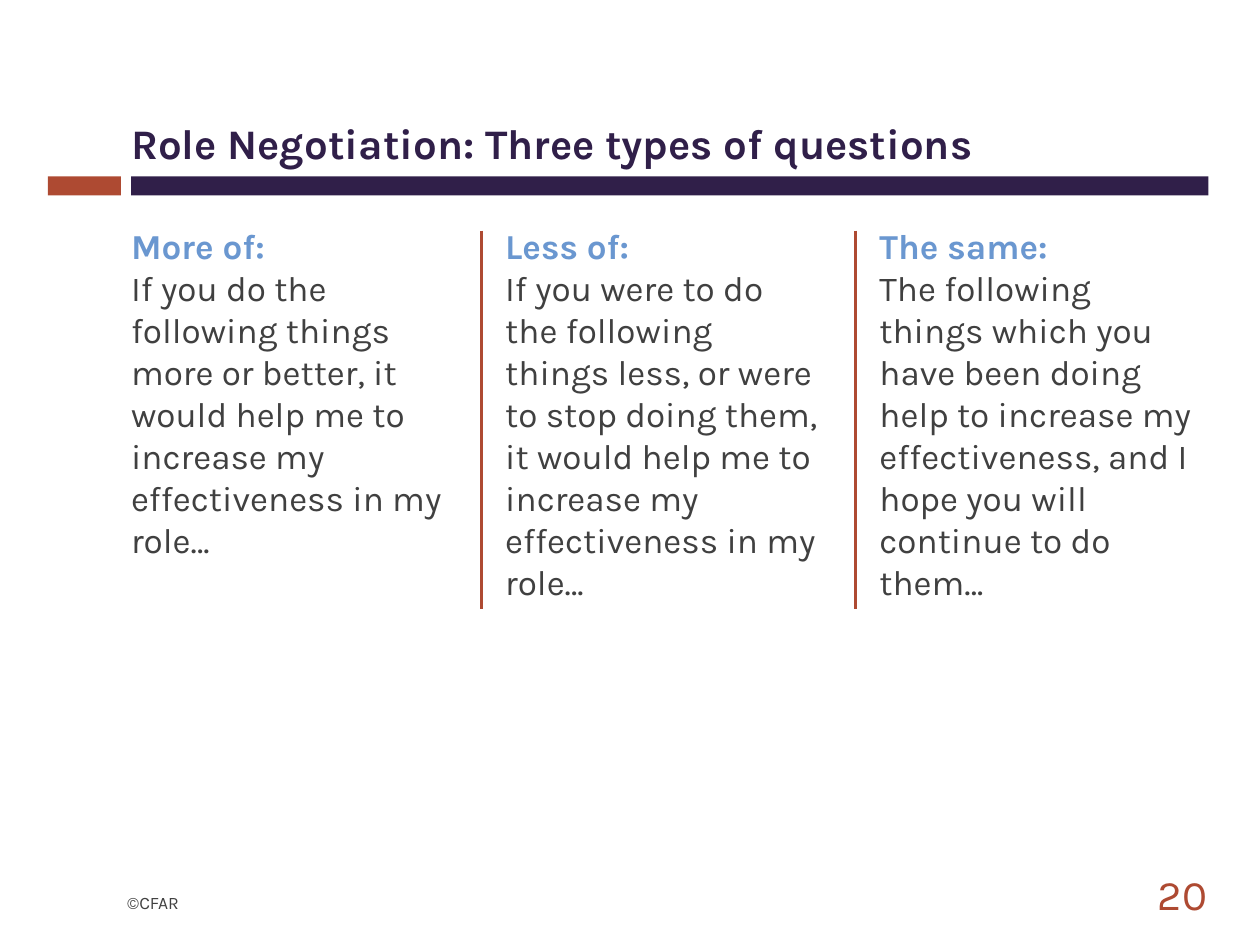
"""Build the role negotiation slide with its three types of questions."""
from dataclasses import dataclass

from lxml import etree
from pptx import Presentation
from pptx import util as u
from pptx.dml.color import RGBColor
from pptx.enum import shapes, text
from pptx.oxml.ns import qn

TITLE = "Role Negotiation: Three types of questions"
QUESTIONS = [
    ("More of:", "If you do the following things more or better, it would help me "
                 "to increase my effectiveness in my role…"),
    ("Less of:", "If you were to do the following things less, or were to stop doing "
                 "them, it would help me to increase my effectiveness in my role…"),
    ("The same:", "The following things which you have been doing help to increase my "
                  "effectiveness, and I hope you will continue to do them…"),
]
COPYRIGHT = "©CFAR"
PAGE = "20"


@dataclass(frozen=True)
class Theme:
    font: str = "Karla"
    purple: str = "301F49"
    rust: str = "AE4A32"
    blue: str = "6A97D0"
    grey: str = "404040"
    title: int = 24
    body: int = 20
    small: int = 10


T = Theme()
W, H = 10, 7.5
LEFT, RIGHT = 1.04, 9.58
COL_W = 2.6
PITCH = (RIGHT - LEFT - COL_W) / (len(QUESTIONS) - 1)
COL_TOP, COL_H = 1.73, 3.21
RULE_TOP, RULE_H, RULE_GAP = 1.83, 3, 0.19
BAR_TOP, BAR_H = 1.4, 0.15
INSET = (0, 0.05, 0.1, 0.05)


def add_run(p, words, size=T.body, color=T.grey, bold=False):
    r = p.add_run()
    r.text = words
    f = r.font
    f.name, f.size, f.bold = T.font, u.Pt(size), bold
    f.color.rgb = RGBColor.from_string(color)


def place(sp, box, inset=(0, 0, 0, 0), anchor="TOP", align="LEFT"):
    sp.left, sp.top, sp.width, sp.height = map(u.Inches, box)
    tf = sp.text_frame
    tf.word_wrap, tf.auto_size = True, text.MSO_AUTO_SIZE.NONE
    tf.margin_left, tf.margin_top, tf.margin_right, tf.margin_bottom = map(u.Inches, inset)
    tf.vertical_anchor = text.MSO_ANCHOR[anchor]
    p = tf.paragraphs[0]
    p.alignment = text.PP_ALIGN[align]
    return p


def add_text(s, box, words, inset=(0, 0, 0, 0), anchor="TOP", align="LEFT", heading=None, **fmt):
    sp = s.shapes.add_textbox(0, 0, 0, 0)
    p = place(sp, box, inset, anchor, align)
    if heading:
        add_run(p, heading, color=T.blue, bold=True)
        p.add_line_break()
    add_run(p, words, **fmt)


def add_bar(s, left, width, color):
    sp = s.shapes.add_shape(shapes.MSO_SHAPE.RECTANGLE,
                            *map(u.Inches, (left, BAR_TOP, width, BAR_H)))
    sp.shadow.inherit = False
    sp.fill.solid()
    sp.fill.fore_color.rgb = RGBColor.from_string(color)
    sp.line.fill.background()


def add_rule(s, x):
    c = s.shapes.add_connector(shapes.MSO_CONNECTOR.STRAIGHT,
                               *map(u.Inches, (x, RULE_TOP, x, RULE_TOP + RULE_H)))
    c.line.color.rgb = RGBColor.from_string(T.rust)
    c.line.width = u.Pt(2)
    etree.SubElement(c._element.spPr, qn("a:effectLst"))


def main():
    prs = Presentation()
    prs.slide_width, prs.slide_height = u.Inches(W), u.Inches(H)
    s = prs.slides.add_slide(prs.slide_layouts[5])

    add_bar(s, 0.38, 0.58, T.rust)
    add_bar(s, LEFT, 8.55, T.purple)
    p = place(s.shapes.title, (LEFT, 0.5, RIGHT - LEFT, 0.88), INSET, "BOTTOM")
    add_run(p, TITLE, size=T.title, color=T.purple, bold=True)

    for i, (heading, words) in enumerate(QUESTIONS):
        x = LEFT + i * PITCH
        add_text(s, (x, COL_TOP, COL_W, COL_H), words, inset=INSET, heading=heading)
        if i:
            add_rule(s, x - RULE_GAP)

    add_text(s, (1.01, 7.01, 0.48, 0.31), COPYRIGHT, anchor="MIDDLE", size=T.small)
    add_text(s, (8.9, 6.83, 0.68, 0.52), PAGE, anchor="MIDDLE", align="RIGHT",
             size=T.title, color=T.rust)
    prs.save("out.pptx")


if __name__ == "__main__":
    main()
